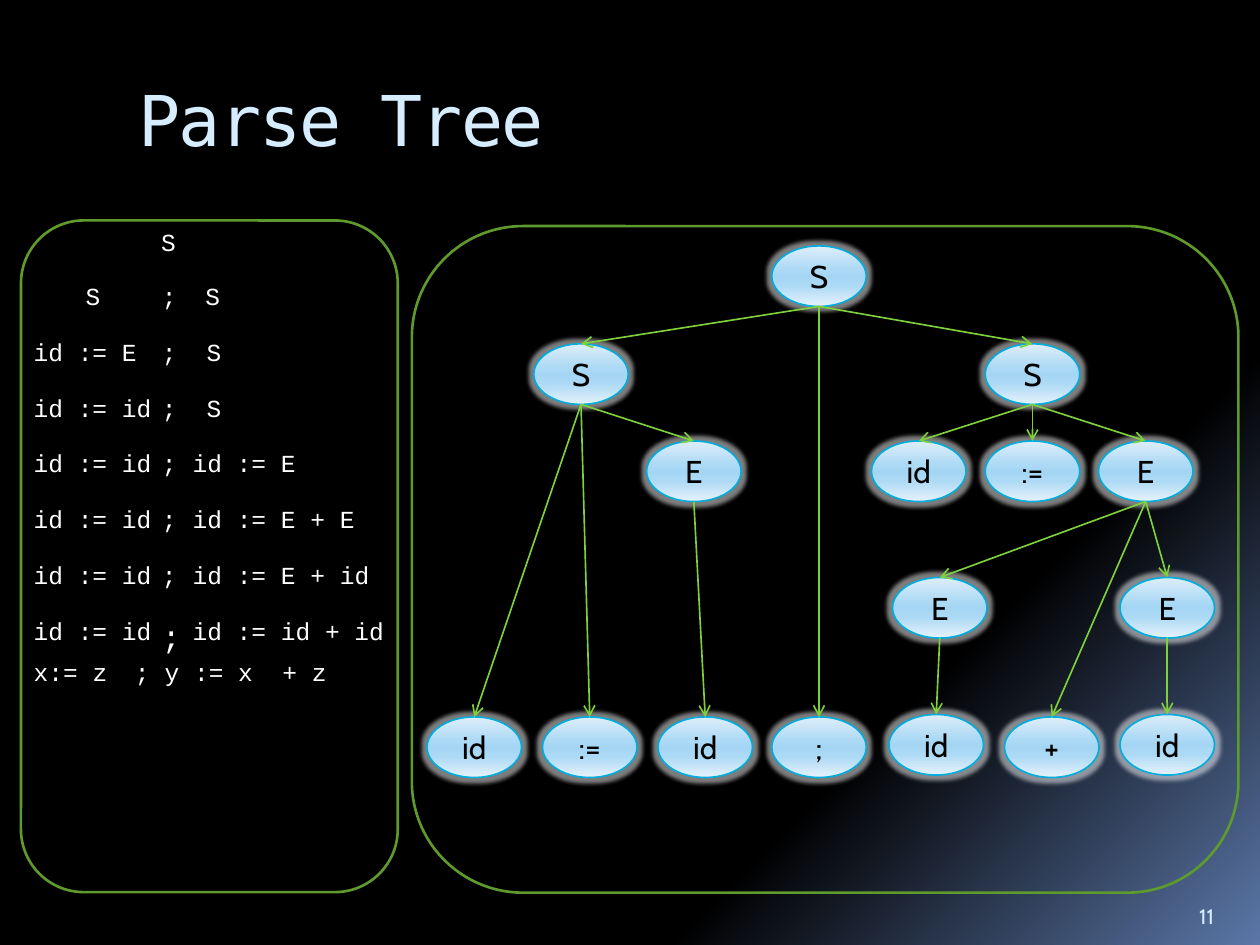
from lxml import etree
from pptx import Presentation
from pptx.dml.color import RGBColor
from pptx.enum import shapes, text
from pptx.oxml.ns import qn
from pptx.util import Pt

BLACK = RGBColor(0x00, 0x00, 0x00)
WHITE = RGBColor(0xFF, 0xFF, 0xFF)
PALE_BLUE = RGBColor(0xD6, 0xEC, 0xFF)
NODE_LINE = RGBColor(0x00, 0xAD, 0xDC)
EDGE_GREEN = RGBColor(0x7F, 0xD1, 0x3B)
PANEL_GREEN = RGBColor(0x5E, 0x9B, 0x2C)
SLATE_BLUE = RGBColor(0x5B, 0x77, 0xA8)
MIST = RGBColor(0xDE, 0xEE, 0xFA)
SKY = RGBColor(0xAC, 0xD9, 0xF5)
DEEP_SKY = RGBColor(0xA4, 0xD6, 0xF4)
FROST = RGBColor(0xE5, 0xF2, 0xFB)

BACKDROP = [(65, BLACK), (73, BLACK), (100, SLATE_BLUE)]
NODE_FILL = [(0, MIST), (40, SKY), (50, DEEP_SKY), (65, SKY), (100, FROST)]
CODE_FONT, NODE_FONT, TITLE_FONT = "Courier New", "Cabin", "DejaVu Sans Mono"

PANELS = [(12, 126, 215.3, 383.8), (235.4, 129.2, 472.3, 380.9)]

# Each derivation step: (left, text) pieces
LEFT, SEMI, RIGHT = 12.2, 85.5, 103
STEPS = [
    [(41.8, "S"), (SEMI, ";"), (110.3, "S")],
    [(LEFT, "id := E"), (SEMI, ";"), (111, "S")],
    [(LEFT, "id := id"), (SEMI, ";"), (111, "S")],
    [(LEFT, "id := id"), (SEMI, ";"), (RIGHT, "id := E")],
    [(LEFT, "id := id"), (SEMI, ";"), (RIGHT, "id := E + E")],
    [(LEFT, "id := id"), (SEMI, ";"), (RIGHT, "id := E + id")],
    [(LEFT, "id := id"), (RIGHT, "id := id + id")],
]
FIRST_STEP, STEP_GAP = 157, 31.9
EXAMPLE = [(LEFT, "x:= z"), (70, ";"), (87, "y := x  + z")]

NODE_W, NODE_H = 54, 34.6
LEVELS = [140.5, 196.5, 252, 330]
LEAF_TOP, RAISED_LEAF_TOP = 409.7, 408.3
LEAF_X = [271 + 66 * i for i in range(7)]

# Tree node: (label, centre, top, children)
TREE = ("S", 468, LEVELS[0], [
    ("S", 332, LEVELS[1], [
        ("id", LEAF_X[0], LEAF_TOP, []),
        (":=", LEAF_X[1], LEAF_TOP, []),
        ("E", 396.5, LEVELS[2], [("id", LEAF_X[2], LEAF_TOP, [])]),
    ]),
    (";", 468, LEAF_TOP, []),
    ("S", 590, LEVELS[1], [
        ("id", 525, LEVELS[2], []),
        (":=", 590, LEVELS[2], []),
        ("E", 654.7, LEVELS[2], [
            ("E", 537, LEVELS[3], [("id", LEAF_X[4], RAISED_LEAF_TOP, [])]),
            ("+", LEAF_X[5], LEAF_TOP, []),
            ("E", LEAF_X[6], LEVELS[3], [("id", LEAF_X[6], RAISED_LEAF_TOP, [])]),
        ]),
    ]),
])


def set_gradient(fill, element, stops, angle):
    """Give a fill, held in element, any number of (percent, colour) stops."""
    fill.gradient()
    fill.gradient_angle = 360 - angle
    stop_list = element.find(".//" + qn("a:gsLst"))
    for old_stop in list(stop_list):
        stop_list.remove(old_stop)
    for percent, colour in stops:
        stop = etree.SubElement(stop_list, qn("a:gs"), pos=str(percent * 1000))
        etree.SubElement(stop, qn("a:srgbClr"), val=str(colour))


def style(paragraph, font_name, size, colour):
    paragraph.font.name = font_name
    paragraph.font.size = Pt(size)
    paragraph.font.color.rgb = colour


def add_text(slide, words, box, font_name, size, colour):
    label = slide.shapes.add_textbox(*map(Pt, box))
    frame = label.text_frame
    frame.word_wrap = True
    frame.text = words
    style(frame.paragraphs[0], font_name, size, colour)
    return frame


def add_code(slide, left, top, words, size=14):
    """Add unwrapped code in a box just wider than its monospaced text."""
    box = (left, top, 0.6 * size * len(words) + 15, 1.15 * size + 8)
    frame = add_text(slide, words, box, CODE_FONT, size, WHITE)
    frame.word_wrap = False
    frame.auto_size = text.MSO_AUTO_SIZE.SHAPE_TO_FIT_TEXT


def add_panel(slide, box):
    panel = slide.shapes.add_shape(shapes.MSO_SHAPE.ROUNDED_RECTANGLE, *map(Pt, box))
    panel.shadow.inherit = False
    panel.fill.background()
    panel.line.color.rgb = PANEL_GREEN
    panel.line.width = Pt(1.5)


def add_node(slide, label, centre, top):
    node = slide.shapes.add_shape(
        shapes.MSO_SHAPE.OVAL, Pt(centre - NODE_W / 2), Pt(top), Pt(NODE_W), Pt(NODE_H))
    set_gradient(node.fill, node.element, NODE_FILL, 90)
    node.line.color.rgb = NODE_LINE
    node.line.width = Pt(0.94)
    node.shadow.inherit = False
    effects = node.element.spPr.find(qn("a:effectLst"))
    glow = etree.SubElement(effects, qn("a:glow"), rad=str(Pt(5)))
    glow_colour = etree.SubElement(glow, qn("a:srgbClr"), val=str(WHITE))
    etree.SubElement(glow_colour, qn("a:alpha"), val="50000")
    frame = node.text_frame
    frame.word_wrap = True
    frame.vertical_anchor = text.MSO_ANCHOR.MIDDLE
    frame.text = label
    frame.paragraphs[0].alignment = text.PP_ALIGN.CENTER
    style(frame.paragraphs[0], NODE_FONT, 18, BLACK)


def add_edge(slide, start, end):
    edge = slide.shapes.add_connector(
        shapes.MSO_CONNECTOR.STRAIGHT, *map(Pt, start + end))
    edge.line.color.rgb = EDGE_GREEN
    edge.line.width = Pt(0.94)
    outline = edge.element.spPr.find(qn("a:ln"))
    etree.SubElement(outline, qn("a:tailEnd"), type="arrow")
    etree.SubElement(edge.element.spPr, qn("a:effectLst"))


def add_tree(slide, tree):
    label, centre, top, children = tree
    add_node(slide, label, centre, top)
    for child in children:
        add_tree(slide, child)
        add_edge(slide, (centre, top + NODE_H), child[1:3])


def main():
    deck = Presentation()
    deck.slide_width, deck.slide_height = Pt(720), Pt(540)
    slide = deck.slides.add_slide(deck.slide_layouts[6])
    set_gradient(slide.background.fill, slide.element, BACKDROP, 45)

    add_text(slide, "Parse Tree", (72, 40.3, 612, 72), TITLE_FONT, 40, PALE_BLUE)
    slide.element.find(".//" + qn("a:defRPr")).set("spc", "-100")
    number = add_text(slide, "11", (678.2, 505.4, 36, 28.8), NODE_FONT, 12, PALE_BLUE)
    number.vertical_anchor = text.MSO_ANCHOR.BOTTOM

    for box in PANELS:
        add_panel(slide, box)

    add_code(slide, 85, 126, "S")
    for i, step in enumerate(STEPS):
        for left, words in step:
            add_code(slide, left, FIRST_STEP + i * STEP_GAP, words)
    add_code(slide, SEMI, 349.2, ";", 18)
    for left, words in EXAMPLE:
        add_code(slide, left, 372.2, words)

    add_tree(slide, TREE)
    deck.save("out.pptx")


if __name__ == "__main__":
    main()
